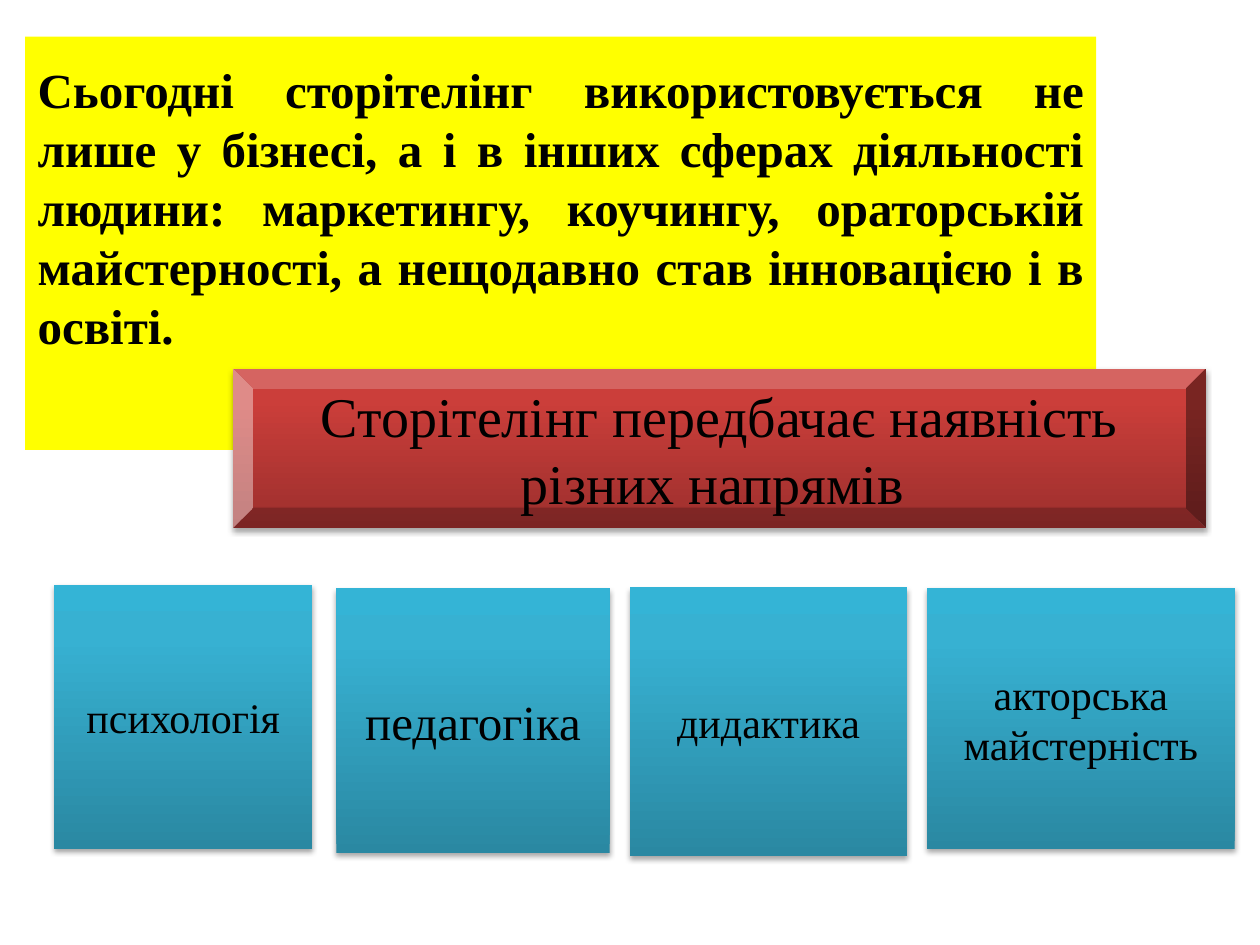
import copy
import dataclasses

import lxml.etree
import pptx
import pptx.dml.color
import pptx.enum.shapes
import pptx.enum.text
import pptx.oxml.ns
import pptx.util

Cm = pptx.util.Cm
Pt = pptx.util.Pt
RGBColor = pptx.dml.color.RGBColor
Shapes = pptx.enum.shapes.MSO_SHAPE
Align = pptx.enum.text.PP_ALIGN
qn = pptx.oxml.ns.qn


@dataclasses.dataclass(frozen=True)
class Theme:
    """Fonts, colours and type sizes of the slide."""

    font: str = "Times New Roman"
    ink: str = "000000"
    note: str = "FFFF00"
    shadow: str = "000000"
    banner: tuple = ((0, "9C2F2D"), (0.8, "CB3E3A"), (1, "CE3B37"))
    card: tuple = ((0, "2A88A2"), (0.8, "37B1D2"), (1, "34B4D6"))
    small: int = 24
    medium: int = 28
    large: int = 32


@dataclasses.dataclass(frozen=True)
class Box:
    """A rectangle in centimetres."""

    left: float
    top: float
    width: float
    height: float

    def inner(self, left, top, width, height):
        """Return a box placed relative to this one."""
        return Box(self.left + left, self.top + top, width, height)


THEME = Theme()

CARDS = (
    ("психологія", THEME.small, (0, 0, 5.21, 5.33), (0.188, -0.083, -0.245, 0.73)),
    ("педагогіка", THEME.medium, (5.69, 0.07, 5.51, 5.33), (0.076, 0.486, -0.373, 0.475)),
    ("дидактика", THEME.small, (11.61, 0.05, 5.59, 5.41), (0.064, 0.646, -0.271, 0.676)),
    ("акторська майстерність", THEME.small, (17.6, 0.07, 6.2, 5.26), (0.217, 0.553, -0.338, 0.316)),
)


def add_shape(slide, kind, box):
    """Add a preset shape without outline or shadow."""
    shape = slide.shapes.add_shape(
        kind, Cm(box.left), Cm(box.top), Cm(box.width), Cm(box.height)
    )
    shape.line.fill.background()
    shape.shadow.inherit = False
    return shape


def write_text(shape, text, size, bold=False, align=Align.CENTER):
    """Write one formatted paragraph in a shape, centred vertically."""
    frame = shape.text_frame
    frame.word_wrap = True
    frame.vertical_anchor = pptx.enum.text.MSO_ANCHOR.MIDDLE
    paragraph = frame.paragraphs[0]
    paragraph.alignment = align
    run = paragraph.add_run()
    run.text = text
    run.font.name = THEME.font
    run.font.size = Pt(size)
    run.font.bold = bold
    run.font.color.rgb = RGBColor.from_string(THEME.ink)


def fill_gradient(shape, stops):
    """Fill a shape with colour stops running from bottom to top."""
    shape.fill.gradient()
    shape.fill.gradient_angle = 90
    stop_list = shape.element.spPr.find(qn("a:gradFill")).find(qn("a:gsLst"))
    stop_list.append(copy.deepcopy(stop_list[0]))
    for stop, (position, color) in zip(shape.fill.gradient_stops, stops):
        stop.position = position
        stop.color.rgb = RGBColor.from_string(color)


def add_shadow(shape):
    """Give a shape a soft shadow falling straight down."""
    effects = shape.element.spPr.find(qn("a:effectLst"))
    shadow = lxml.etree.SubElement(
        effects, qn("a:outerShdw"), blurRad=str(Pt(3.1)), dist=str(Pt(1.8)),
        dir="5400000", rotWithShape="0",
    )
    color = lxml.etree.SubElement(shadow, qn("a:srgbClr"), val=THEME.shadow)
    lxml.etree.SubElement(color, qn("a:alpha"), val="35000")


def add_note(slide, box):
    """Add the yellow introductory note."""
    note = add_shape(slide, Shapes.FOLDED_CORNER, box)
    note.fill.solid()
    note.fill.fore_color.rgb = RGBColor.from_string(THEME.note)
    note.text_frame.margin_bottom = Cm(0.2)
    write_text(
        note,
        "Сьогодні сторітелінг використовується не лише у бізнесі, а і в інших "
        "сферах діяльності людини: маркетингу, коучингу, ораторській "
        "майстерності, а нещодавно став інновацією і в освіті. ",
        size=THEME.medium, bold=True, align=Align.JUSTIFY,
    )


def add_banner(slide, box):
    """Add the red bevelled banner."""
    banner = add_shape(slide, Shapes.BEVEL, box)
    fill_gradient(banner, THEME.banner)
    add_shadow(banner)
    write_text(banner, "Сторітелінг передбачає наявність різних напрямів ", size=THEME.large)


def add_cards(slide, box):
    """Add the row of blue direction cards."""
    for text, size, place, adjustments in CARDS:
        card = add_shape(slide, Shapes.LINE_CALLOUT_1, box.inner(*place))
        for index, value in enumerate(adjustments):
            card.adjustments[index] = value
        fill_gradient(card, THEME.card)
        add_shadow(card)
        write_text(card, text, size=size)


def main():
    """Build and save the presentation."""
    presentation = pptx.Presentation()
    presentation.slide_width = Cm(25.4)
    presentation.slide_height = Cm(19.05)
    slide = presentation.slides.add_slide(presentation.slide_layouts[6])
    add_note(slide, Box(0.51, 0.74, 21.59, 8.33))
    add_banner(slide, Box(4.7, 7.44, 19.61, 3.2))
    add_cards(slide, Box(1.09, 11.79, 23.8, 5.46))
    presentation.save("out.pptx")


if __name__ == "__main__":
    main()
